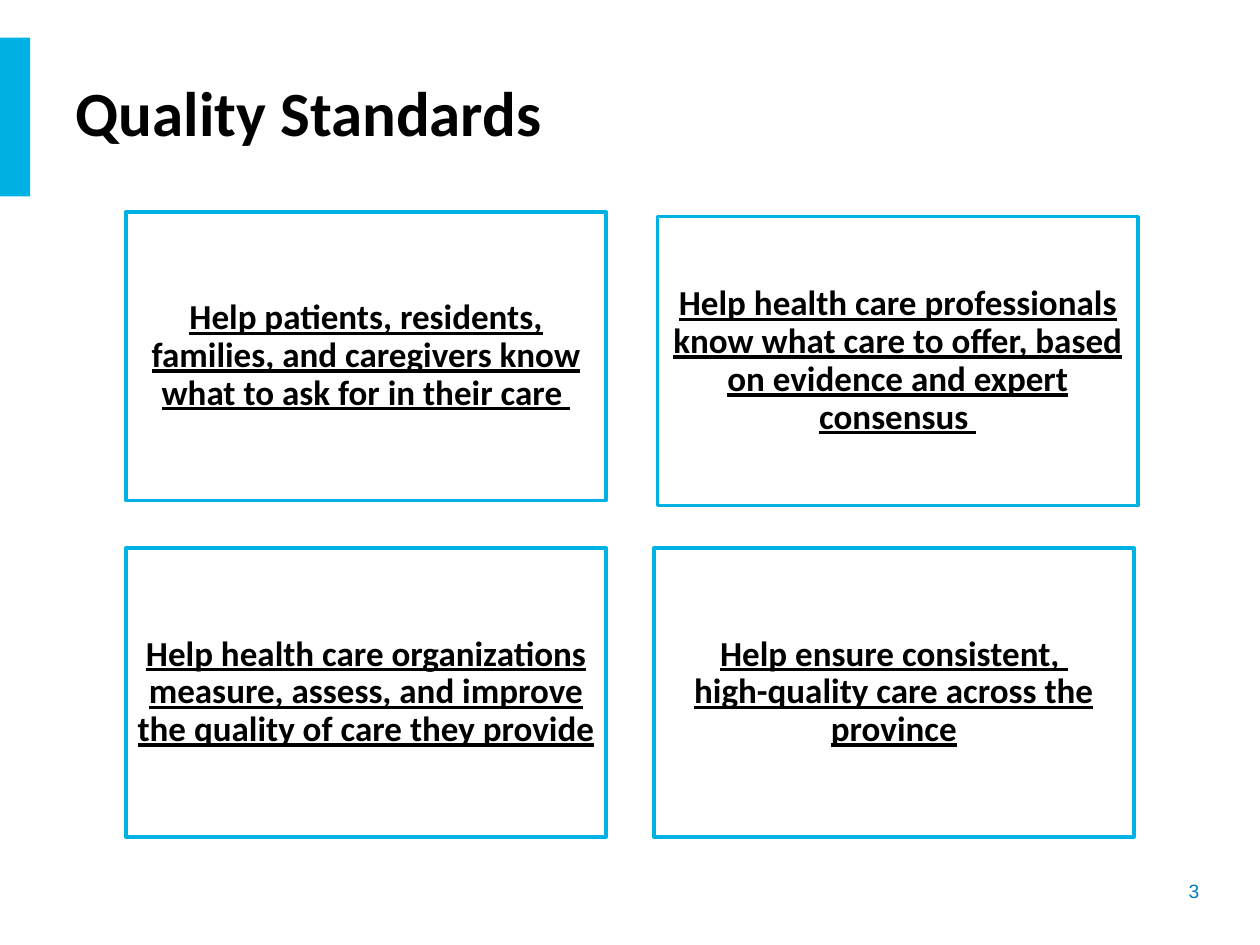
from pptx import Presentation
from pptx.dml.color import RGBColor
from pptx.enum.shapes import MSO_SHAPE
from pptx.enum.text import MSO_ANCHOR, PP_ALIGN
from pptx.util import Cm, Pt

RECTANGLE = MSO_SHAPE.RECTANGLE
MIDDLE = MSO_ANCHOR.MIDDLE
LEFT, CENTER, RIGHT = PP_ALIGN.LEFT, PP_ALIGN.CENTER, PP_ALIGN.RIGHT

COLORS = {"accent": "00B2E3", "text": "000000", "number": "047BC1"}
TITLE_FONT = {"name": "Calibri", "size": Pt(36), "bold": True}
CARD_FONT = {"name": "Calibri", "size": Pt(20), "bold": True, "underline": True}
NUMBER_FONT = {"name": "Arial", "size": Pt(11)}
CARD_FRAME = {
    "word_wrap": True,
    "vertical_anchor": MIDDLE,
    "margin_left": Cm(0.2),
    "margin_right": Cm(0.2),
    "margin_top": Cm(0.2),
    "margin_bottom": Cm(0.2),
}
CARD_WIDTH, CARD_HEIGHT = Cm(9.68), Cm(5.82)
CARDS = [
    (2.54, 4.27, "Help patients, residents, families, and caregivers know "
                 "what to ask for in their care "),
    (13.26, 4.37, "Help health care professionals know what care to offer, "
                  "based on evidence and expert consensus "),
    (2.54, 11.05, "Help health care organizations measure, assess, and improve "
                  "the quality of care they provide"),
    (13.18, 11.05, "Help ensure consistent, \vhigh-quality care across the province"),
]


def write(text_frame, text, font, color, alignment):
    paragraph = text_frame.paragraphs[0]
    paragraph.text = text
    paragraph.alignment = alignment
    for run in paragraph.runs:
        for name, value in font.items():
            setattr(run.font, name, value)
        run.font.color.rgb = RGBColor.from_string(COLORS[color])
    return paragraph


presentation = Presentation()
presentation.slide_width, presentation.slide_height = Cm(25.4), Cm(19.05)
slide = presentation.slides.add_slide(presentation.slide_layouts[5])

# Title and accent bar
title = slide.shapes.title
title.left, title.top, title.width, title.height = Cm(1.27), Cm(1.27), Cm(19.84), Cm(1.96)
title.text_frame.vertical_anchor = MIDDLE
write(title.text_frame, "Quality Standards", TITLE_FONT, "text", LEFT)

bar = slide.shapes.add_shape(RECTANGLE, Cm(0), Cm(0.76), Cm(0.61), Cm(3.2))
bar.shadow.inherit = False
bar.fill.solid()
bar.fill.fore_color.rgb = RGBColor.from_string(COLORS["accent"])
bar.line.fill.background()

# Cards
for left, top, text in CARDS:
    card = slide.shapes.add_shape(RECTANGLE, Cm(left), Cm(top), CARD_WIDTH, CARD_HEIGHT)
    card.shadow.inherit = False
    card.fill.background()
    card.line.color.rgb = RGBColor.from_string(COLORS["accent"])
    card.line.width = Pt(2)
    for name, value in CARD_FRAME.items():
        setattr(card.text_frame, name, value)
    paragraph = write(card.text_frame, text, CARD_FONT, "text", CENTER)
    paragraph.line_spacing = 0.9

# Slide number
number = slide.shapes.add_textbox(Cm(21.46), Cm(17.6), Cm(2.97), Cm(0.74))
number.text_frame.word_wrap = True
write(number.text_frame, "3", NUMBER_FONT, "number", RIGHT)

presentation.save("out.pptx")
